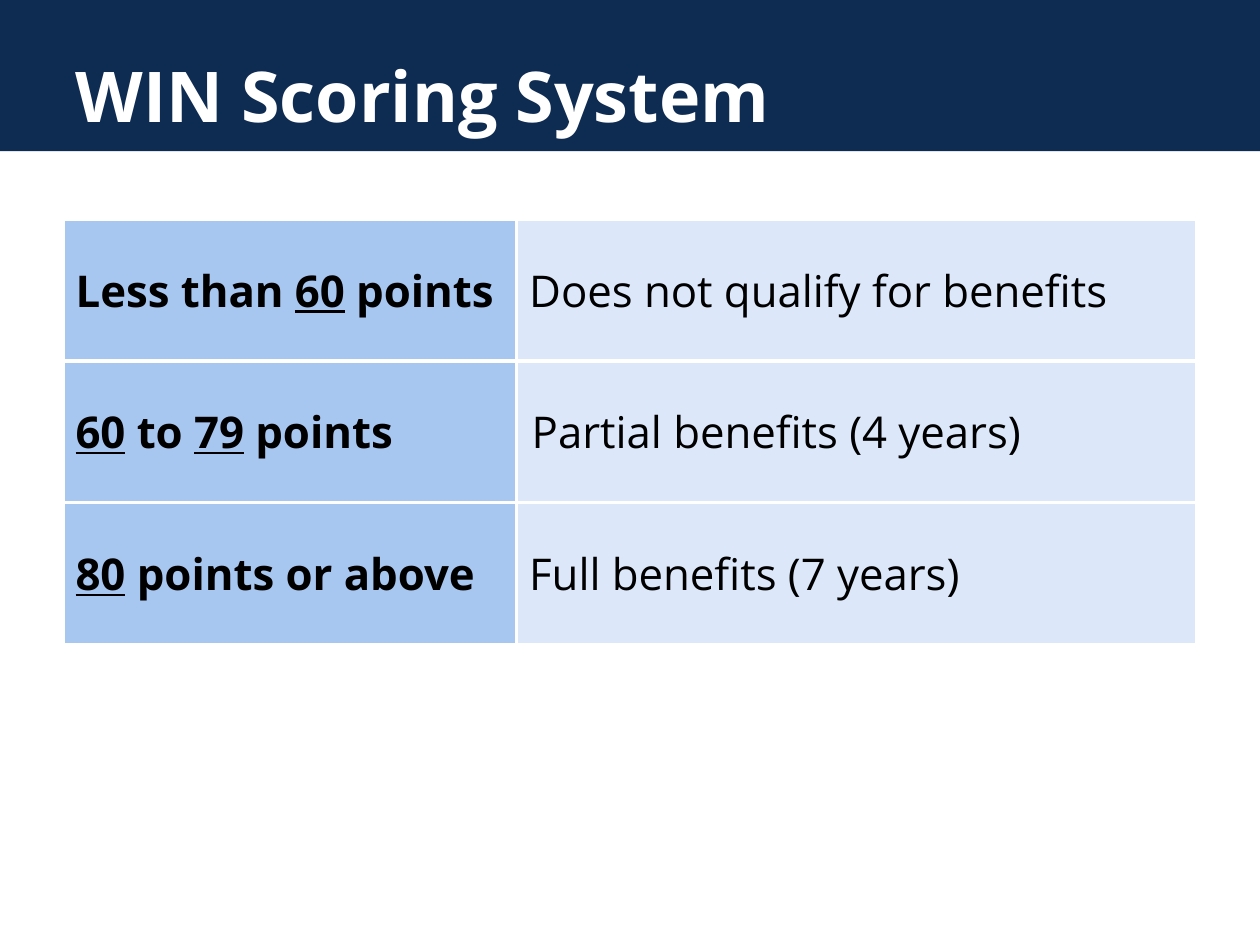
from lxml.etree import SubElement
from pptx import Presentation
from pptx.dml.color import RGBColor
from pptx.enum.shapes import MSO_SHAPE as Shape
from pptx.enum.text import MSO_ANCHOR as Anchor, MSO_AUTO_SIZE as AutoSize, PP_ALIGN as Align
from pptx.oxml.ns import qn
from pptx.util import Inches, Pt

NAVY = RGBColor(0x0E, 0x2B, 0x52)
MID_BLUE = RGBColor(0xA7, 0xC6, 0xF0)
PALE_BLUE = RGBColor(0xDC, 0xE8, 0xF9)
WHITE = RGBColor(0xFF, 0xFF, 0xFF)
BLACK = RGBColor(0, 0, 0)

SCORES = [
    (["Less than ", "60", " points"], "Does not qualify for benefits", 0),
    (["60", " to ", "79", " points"], "Partial benefits (4 years)", 0.02),
    (["80", " points or above"], "Full benefits (7 years)", 0),
]


def write_run(paragraph, text, font="Open Sans", size=25, color=BLACK, bold=False, underline=None):
    run = paragraph.add_run()
    run.text = text
    run.font.name = font
    run.font.size = Pt(size)
    run.font.color.rgb = color
    run.font.bold = bold
    run.font.underline = underline


class SlideBuilder:
    def __init__(self, presentation):
        self.width = presentation.slide_width
        self.height = presentation.slide_height
        self.slide = presentation.slides.add_slide(presentation.slide_layouts[5])

    def box(self, left, top, width, height):
        return (int(left * self.width), int(top * self.height),
                int(width * self.width), int(height * self.height))

    def band(self, *shares, color=NAVY):
        shape = self.slide.shapes.add_shape(Shape.RECTANGLE, *self.box(*shares))
        shape.shadow.inherit = False
        shape.fill.solid()
        shape.fill.fore_color.rgb = color
        shape.line.fill.background()
        self.slide.shapes._spTree.insert(2, shape._element)

    def title(self, text, *shares):
        title = self.slide.shapes.title
        title.left, title.top, title.width, title.height = self.box(*shares)
        frame = title.text_frame
        frame.auto_size = AutoSize.NONE
        frame.vertical_anchor = Anchor.MIDDLE
        paragraph = frame.paragraphs[0]
        paragraph.alignment = Align.LEFT
        write_run(paragraph, text, size=40, color=WHITE, bold=True)

    def borders(self, cell, color=WHITE, weight=2.25):
        properties = cell._tc.get_or_add_tcPr()
        for index, side in enumerate(("lnL", "lnR", "lnT", "lnB")):
            line = SubElement(properties, qn(f"a:{side}"), w=str(Pt(weight)))
            fill = SubElement(line, qn("a:solidFill"))
            SubElement(fill, qn("a:srgbClr"), val=str(color))
            properties.insert(index, line)

    def cell(self, cell, color):
        cell.fill.solid()
        cell.fill.fore_color.rgb = color
        cell.vertical_anchor = Anchor.MIDDLE
        self.borders(cell)
        return cell.text_frame.paragraphs[0]

    def score_table(self, scores, *shares, first_column):
        left, top, width, height = self.box(*shares)
        table = self.slide.shapes.add_table(len(scores), 2, left, top, width, height).table
        table.first_row = table.horz_banding = False
        table.columns[0].width = int(width * first_column)
        table.columns[1].width = width - table.columns[0].width
        for row, (score, benefit, indent) in enumerate(scores):
            paragraph = self.cell(table.cell(row, 0), MID_BLUE)
            for part in score:
                write_run(paragraph, part, bold=True, underline=part.isdigit())
            paragraph = self.cell(table.cell(row, 1), PALE_BLUE)
            if indent:
                paragraph._p.get_or_add_pPr().set("marL", str(Inches(indent)))
            write_run(paragraph, benefit)


def main():
    presentation = Presentation()
    presentation.slide_width = Inches(10)
    presentation.slide_height = Inches(7.5)
    builder = SlideBuilder(presentation)
    builder.band(0, 0, 1, 0.16)
    builder.title("WIN Scoring System", 0.05, 0.04, 0.9, 0.12)
    builder.score_table(SCORES, 0.05, 0.232, 0.9, 0.45, first_column=0.4)
    presentation.save("out.pptx")


if __name__ == "__main__":
    main()
